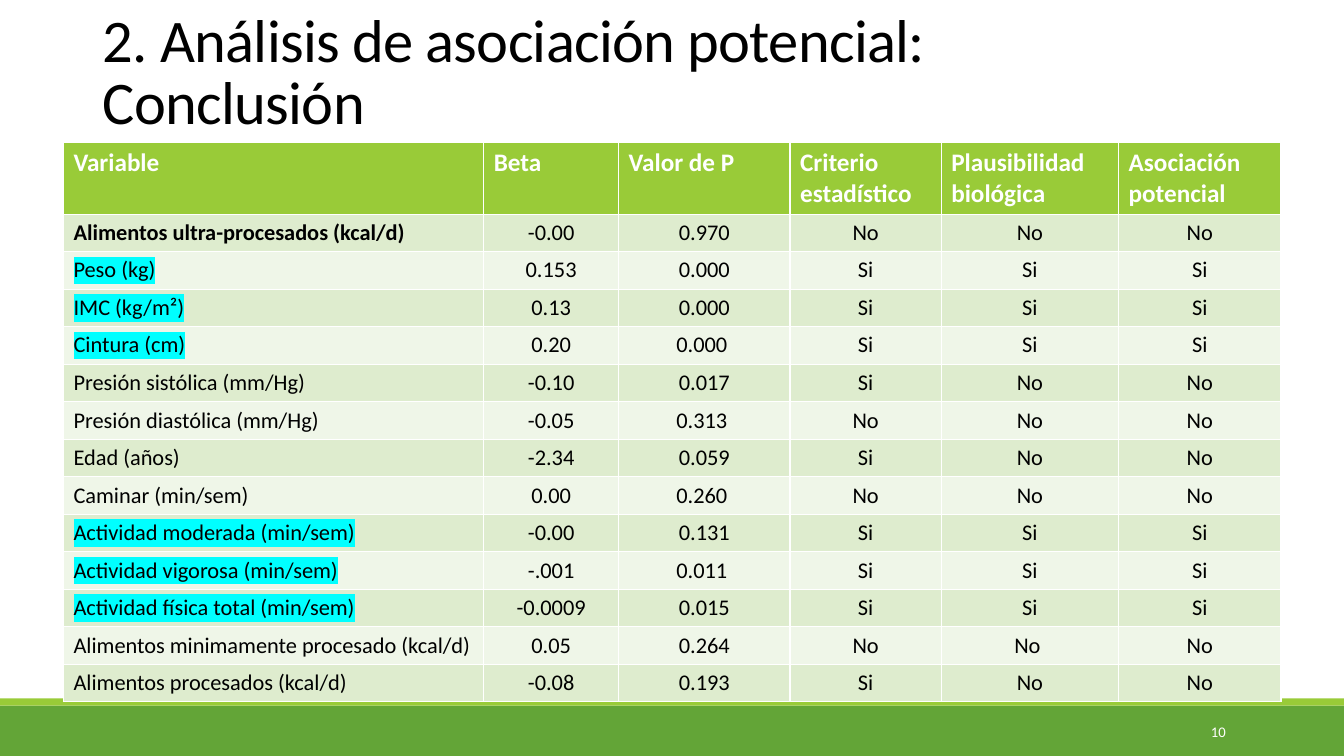
from dataclasses import astuple, dataclass

from lxml.etree import Element, SubElement
from pptx import Presentation
from pptx.dml.color import RGBColor
from pptx.enum.shapes import MSO_SHAPE as Preset
from pptx.enum.text import MSO_ANCHOR as Anchor, PP_ALIGN as Align
from pptx.oxml.ns import qn
from pptx.util import Cm, Pt

FONT = "Calibri"
COLOURS = {
    "green": "63A537",
    "lime": "99CB38",
    "odd row": "DEECCE",
    "even row": "EFF6E8",
    "highlight": "00FFFF",
    "black": "000000",
    "white": "FFFFFF",
}


@dataclass(frozen=True)
class Band:
    top: float
    height: float
    colour: str


@dataclass(frozen=True)
class Measure:
    variable: str
    beta: str
    p_value: str
    criterion: str
    plausibility: str
    association: str


BANDS = [Band(17.78, 1.27, "green"), Band(17.6, 0.18, "lime")]
COLUMN_WIDTHS = [10.59, 3.4, 4.32, 3.81, 4.47, 4.09]
HEADER_HEIGHT, ROW_HEIGHT = 1.73, 0.93
HEADER = Measure(
    "Variable", "Beta", "Valor de P", "Criterio estadístico",
    "Plausibilidad biológica", "Asociación potencial",
)
MAIN_VARIABLE = "Alimentos ultra-procesados (kcal/d)"
MEASURES = [
    Measure(MAIN_VARIABLE, "-0.00", "0.970", "No", "No", "No"),
    Measure("Peso (kg)", "0.153", "0.000", "Si", "Si", "Si"),
    Measure("IMC (kg/m²)", "0.13", "0.000", "Si", "Si", "Si"),
    Measure("Cintura (cm)", "0.20", "0.000 ", "Si", "Si", "Si"),
    Measure("Presión sistólica (mm/Hg)", "-0.10", "0.017", "Si", "No", "No"),
    Measure("Presión diastólica (mm/Hg)", "-0.05", "0.313 ", "No", "No", "No"),
    Measure("Edad (años)", "-2.34", "0.059", "Si", "No", "No"),
    Measure("Caminar (min/sem)", "0.00", "0.260 ", "No", "No", "No"),
    Measure("Actividad moderada (min/sem)", "-0.00", "0.131", "Si", "Si", "Si"),
    Measure("Actividad vigorosa (min/sem)", "-.001", "0.011 ", "Si", "Si", "Si"),
    Measure("Actividad física total (min/sem)", "-0.0009", "0.015", "Si", "Si", "Si"),
    Measure("Alimentos minimamente procesado (kcal/d)", "0.05", "0.264", "No", "No ", "No"),
    Measure("Alimentos procesados (kcal/d)", "-0.08", "0.193", "Si", "No", "No"),
]


def colour_of(name: str) -> RGBColor:
    return RGBColor.from_string(COLOURS[name])


def format_text(frame, size: float, colour: str, align=Align.LEFT, bold: bool = False) -> None:
    for para in frame.paragraphs:
        para.alignment = align
        for span in para.runs:
            span.font.name = FONT
            span.font.size = Pt(size)
            span.font.bold = bold
            span.font.color.rgb = colour_of(colour)


def highlight_text(frame) -> None:
    for span in frame.paragraphs[0].runs:
        mark = Element(qn("a:highlight"))
        SubElement(mark, qn("a:srgbClr"), val=COLOURS["highlight"])
        span.font._element.find(qn("a:solidFill")).addnext(mark)


def draw_band(page, band: Band, width: int) -> None:
    box = page.shapes.add_shape(Preset.RECTANGLE, 0, Cm(band.top), width, Cm(band.height))
    box.shadow.inherit = False
    box.fill.solid()
    box.fill.fore_color.rgb = colour_of(band.colour)
    box.line.fill.background()


def draw_title(page) -> None:
    title = page.shapes.title
    title.left, title.top, title.width, title.height = Cm(2.34), Cm(0.91), Cm(27.94), Cm(2.67)
    frame = title.text_frame
    frame.text = "2. Análisis de asociación potencial: Conclusión"
    frame.word_wrap = True
    frame.vertical_anchor = Anchor.BOTTOM
    format_text(frame, 43.2, "black")
    para = frame.paragraphs[0]
    para.line_spacing = 0.85
    para.runs[0].font._element.set("spc", "-50")


def fill_row(table, index: int, measure: Measure) -> None:
    is_header = index == 0
    fill = "lime" if is_header else "odd row" if index % 2 else "even row"
    for column, text in enumerate(astuple(measure)):
        cell = table.cell(index, column)
        cell.fill.solid()
        cell.fill.fore_color.rgb = colour_of(fill)
        cell.text_frame.text = text
        if is_header:
            format_text(cell.text_frame, 18, "white", bold=True)
        else:
            align = Align.CENTER if column else Align.LEFT
            format_text(cell.text_frame, 16, "black", align, text == MAIN_VARIABLE)
    if measure.association == "Si":
        highlight_text(table.cell(index, 0).text_frame)


def draw_table(page) -> None:
    measures = [HEADER, *MEASURES]
    heights = [HEADER_HEIGHT] + [ROW_HEIGHT] * len(MEASURES)
    table = page.shapes.add_table(
        len(measures), len(COLUMN_WIDTHS), Cm(1.6), Cm(3.59),
        Cm(sum(COLUMN_WIDTHS)), Cm(sum(heights)),
    ).table
    for column, width in zip(table.columns, COLUMN_WIDTHS):
        column.width = Cm(width)
    for row, height in zip(table.rows, heights):
        row.height = Cm(height)
    for index, measure in enumerate(measures):
        fill_row(table, index, measure)


def draw_page_number(page) -> None:
    box = page.shapes.add_textbox(Cm(27.51), Cm(17.93), Cm(3.63), Cm(1.02))
    frame = box.text_frame
    frame.word_wrap = True
    frame.vertical_anchor = Anchor.MIDDLE
    frame.text = "10"
    format_text(frame, 10.5, "white", Align.RIGHT)


def main() -> None:
    deck = Presentation()
    deck.slide_width, deck.slide_height = Cm(33.87), Cm(19.05)
    page = deck.slides.add_slide(deck.slide_layouts[5])
    for band in BANDS:
        draw_band(page, band, deck.slide_width)
    draw_title(page)
    draw_table(page)
    draw_page_number(page)
    deck.save("out.pptx")


if __name__ == "__main__":
    main()
